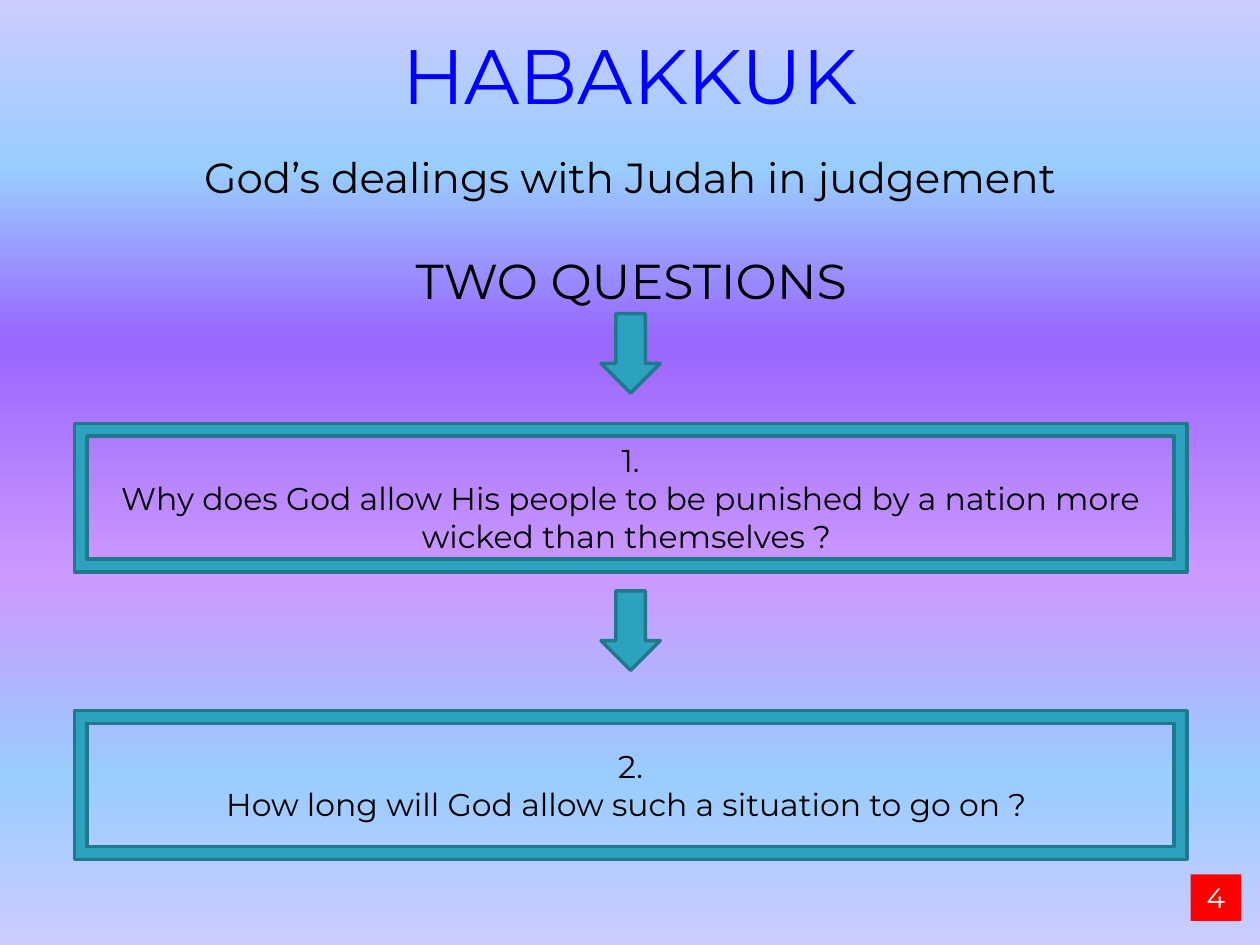
from copy import deepcopy
from pptx import Presentation
from pptx.dml.color import RGBColor
from pptx.enum.shapes import MSO_SHAPE
from pptx.enum.text import MSO_ANCHOR, MSO_AUTO_SIZE, PP_ALIGN
from pptx.oxml.ns import qn
from pptx.util import Inches, Pt

HUES = {
    "pale": "CCCCFF", "sky": "99CCFF", "deep": "9966FF", "pink": "CC99FF",
    "teal": "2DA2BF", "edge": "21788D", "blue": "0000FF",
    "red": "FF0000", "black": "000000", "white": "FFFFFF",
}
STOPS = [(0, "pale"), (0.18, "sky"), (0.36, "deep"),
         (0.61, "pink"), (0.82, "sky"), (1, "pale")]
FACE = "Montserrat"


def hue(name):
    return RGBColor.from_string(HUES[name])


def paint_back(slide):
    fill = slide.background.fill
    fill.gradient()
    fill.gradient_angle = 270
    group = next(slide.element.iter(qn("a:gsLst")))
    while len(group) < len(STOPS):
        group.append(deepcopy(group[0]))
    for stop, (place, name) in zip(fill.gradient_stops, STOPS):
        stop.position = place
        stop.color.rgb = hue(name)


def write(shape, lines, size, tone="black", **extra):
    frame = shape.text_frame
    form = {"word_wrap": True, "vertical_anchor": MSO_ANCHOR.TOP, **extra}
    for key, value in form.items():
        setattr(frame, key, value)
    frame.text = "\n".join(lines)
    for para in frame.paragraphs:
        para.alignment = PP_ALIGN.CENTER
        font = para.runs[0].font
        for key, value in {"name": FACE, "size": Pt(size)}.items():
            setattr(font, key, value)
        font.color.rgb = hue(tone)


def add_text(slide, box, text, size, tone="black"):
    shape = slide.shapes.add_textbox(*map(Inches, box))
    write(shape, [text], size, tone, auto_size=MSO_AUTO_SIZE.SHAPE_TO_FIT_TEXT)


def add_block(slide, kind, box, tone="teal", edge="edge"):
    shape = slide.shapes.add_shape(kind, *map(Inches, box))
    shape.shadow.inherit = False
    shape.fill.solid()
    shape.fill.fore_color.rgb = hue(tone)
    if edge:
        shape.line.color.rgb = hue(edge)
        shape.line.width = Pt(2)
    else:
        shape.line.fill.background()
    return shape


def add_head(slide, left, top, width):
    add_text(slide, (left, top, width, 0.84), "HABAKKUK", 44, "blue")
    add_text(slide, (left, top + 0.98, width, 0.5),
             "God’s dealings with Judah in judgement", 24)
    add_text(slide, (left + 2.41, top + 1.77, 5.2, 0.57), "TWO QUESTIONS", 28)


def add_quest(slide, left, top, width, height, drop, lines):
    add_block(slide, MSO_SHAPE.DOWN_ARROW,
              (left + (width - 0.47) / 2, top, 0.47, 0.63))
    panel = add_block(slide, MSO_SHAPE.FRAME,
                      (left, top + drop, width, height - drop))
    panel.adjustments[0] = 0.087
    write(panel, lines, 18, vertical_anchor=MSO_ANCHOR.MIDDLE)


def add_page(slide, box, text):
    shape = add_block(slide, MSO_SHAPE.RECTANGLE, box, "red", None)
    write(shape, [text], 16, "white",
          auto_size=MSO_AUTO_SIZE.SHAPE_TO_FIT_TEXT)


def main():
    deck = Presentation()
    deck.slide_width, deck.slide_height = Inches(10), Inches(7.5)
    slide = deck.slides.add_slide(deck.slide_layouts[6])
    paint_back(slide)
    add_head(slide, 0, 0.17, 10)
    add_quest(slide, 0.59, 2.49, 8.83, 2.05, 0.87, [
        "1.",
        "Why does God allow His people to be punished by a nation "
        "more wicked than themselves ? "])
    add_quest(slide, 0.59, 4.69, 8.83, 2.13, 0.95, [
        "2.", "How long will God allow such a situation to go on ? "])
    add_page(slide, (9.45, 6.94, 0.4, 0.37), "4")
    deck.save("out.pptx")


if __name__ == "__main__":
    main()
